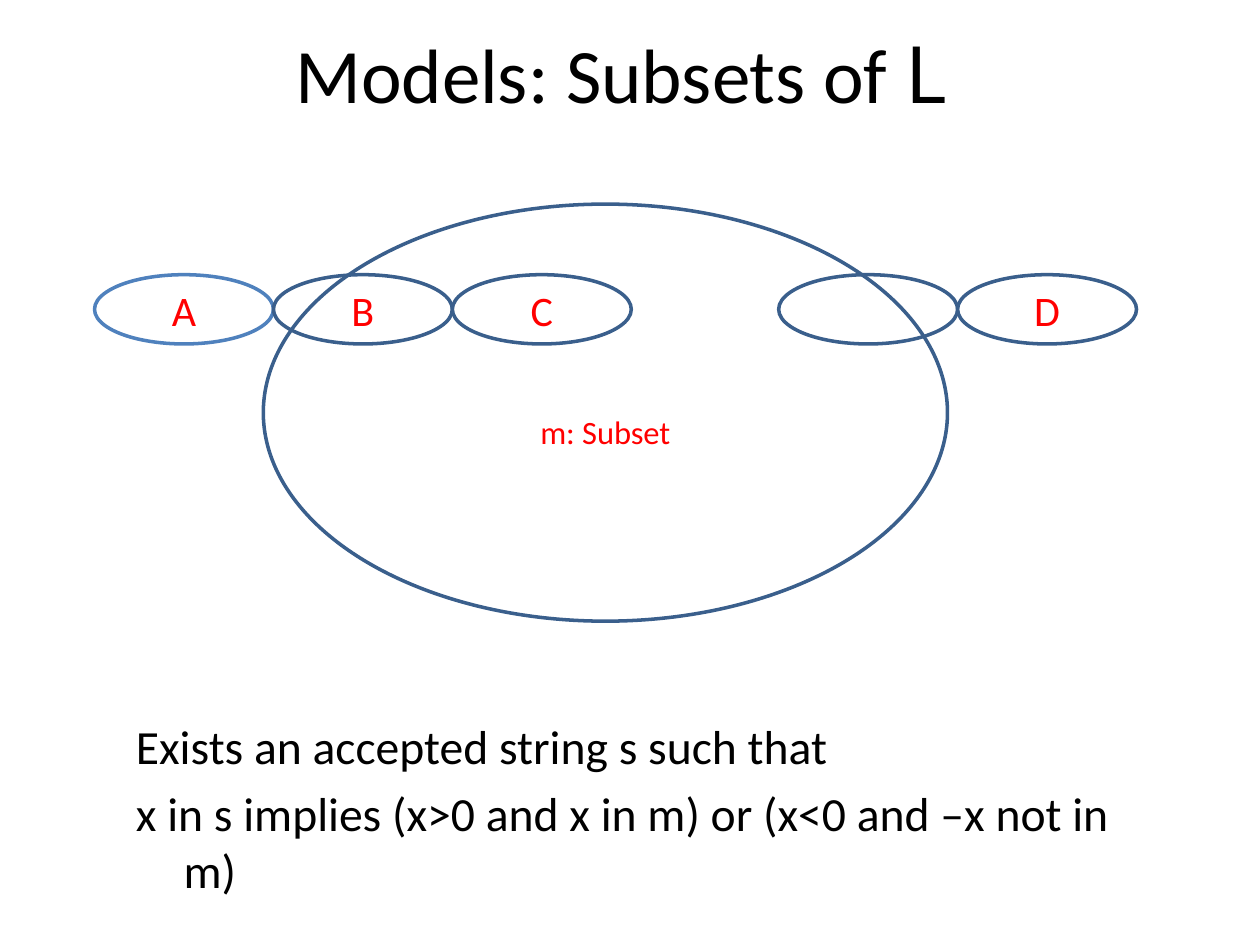
from pptx import Presentation
from pptx.dml.color import RGBColor
from pptx.enum.shapes import MSO_SHAPE
from pptx.enum.text import MSO_ANCHOR, PP_ALIGN
from pptx.util import Inches, Pt

OVAL = MSO_SHAPE.OVAL
MIDDLE = MSO_ANCHOR.MIDDLE
CENTER = PP_ALIGN.CENTER
COLORS = {"text": "000000", "label": "FF0000", "paper": "FFFFFF",
          "outline": "3A5F8C", "first": "4F81BD"}

deck = Presentation()
deck.slide_width, deck.slide_height = Inches(10), Inches(7.5)
page = deck.slides.add_slide(deck.slide_layouts[5])


def add_span(para, text, size, color="text", font="Calibri", baseline=None):
    span = para.add_run()
    span.text = text
    span.font.size = Pt(size)
    span.font.name = font
    span.font.color.rgb = RGBColor.from_string(COLORS[color])
    if baseline is not None:
        span._r.get_or_add_rPr().set("baseline", str(baseline * 1000))


def add_oval(text, left, top, width, height, size=24, line="outline",
             fill="paper", baseline=None):
    oval = page.shapes.add_shape(OVAL, Inches(left), Inches(top),
                                 Inches(width), Inches(height))
    oval.shadow.inherit = False
    if fill:
        oval.fill.solid()
        oval.fill.fore_color.rgb = RGBColor.from_string(COLORS[fill])
    else:
        oval.fill.background()
    oval.line.color.rgb = RGBColor.from_string(COLORS[line])
    oval.line.width = Pt(2)
    oval.text_frame.vertical_anchor = MIDDLE
    para = oval.text_frame.paragraphs[0]
    para.alignment = CENTER
    if text:
        add_span(para, text, size, color="label", baseline=baseline)


# Title
title = page.shapes.title
title.left, title.top = Inches(0.5), Inches(0)
title.width, title.height = Inches(9), Inches(1.15)
title.text_frame.vertical_anchor = MIDDLE
heading = title.text_frame.paragraphs[0]
heading.alignment = CENTER
add_span(heading, "Models: Subsets of ", 44)
add_span(heading, "L ", 44, font="Noto Sans CJK JP")

# Two runs of touching ovals in one row
oval_width, oval_height, row_top = 1.42, 0.55, 2.18
for start, labels in ((0.75, "ABC"), (6.18, ["", "D"])):
    for column, label in enumerate(labels):
        add_oval(label, start + column * oval_width, row_top, oval_width,
                 oval_height, line="first" if label == "A" else "outline")

# Subset drawn over the row
add_oval("m: Subset", 2.09, 1.62, 5.43, 3.31, size=32, fill=None, baseline=-25)

# Acceptance condition with hanging indents
box = page.shapes.add_textbox(Inches(0.98), Inches(5.64), Inches(8.28), Inches(1.18))
frame = box.text_frame
frame.word_wrap = True
statements = ("Exists an accepted string s such that",
              "x in s implies (x>0 and x in m) or (x<0 and –x not in m)")
for number, statement in enumerate(statements):
    para = frame.add_paragraph() if number else frame.paragraphs[0]
    properties = para._p.get_or_add_pPr()
    properties.set("marL", str(Inches(0.38)))
    properties.set("indent", str(-Inches(0.38)))
    if number:
        para.space_before = Pt(5.4)
    add_span(para, statement, 27.2)

deck.save("out.pptx")
